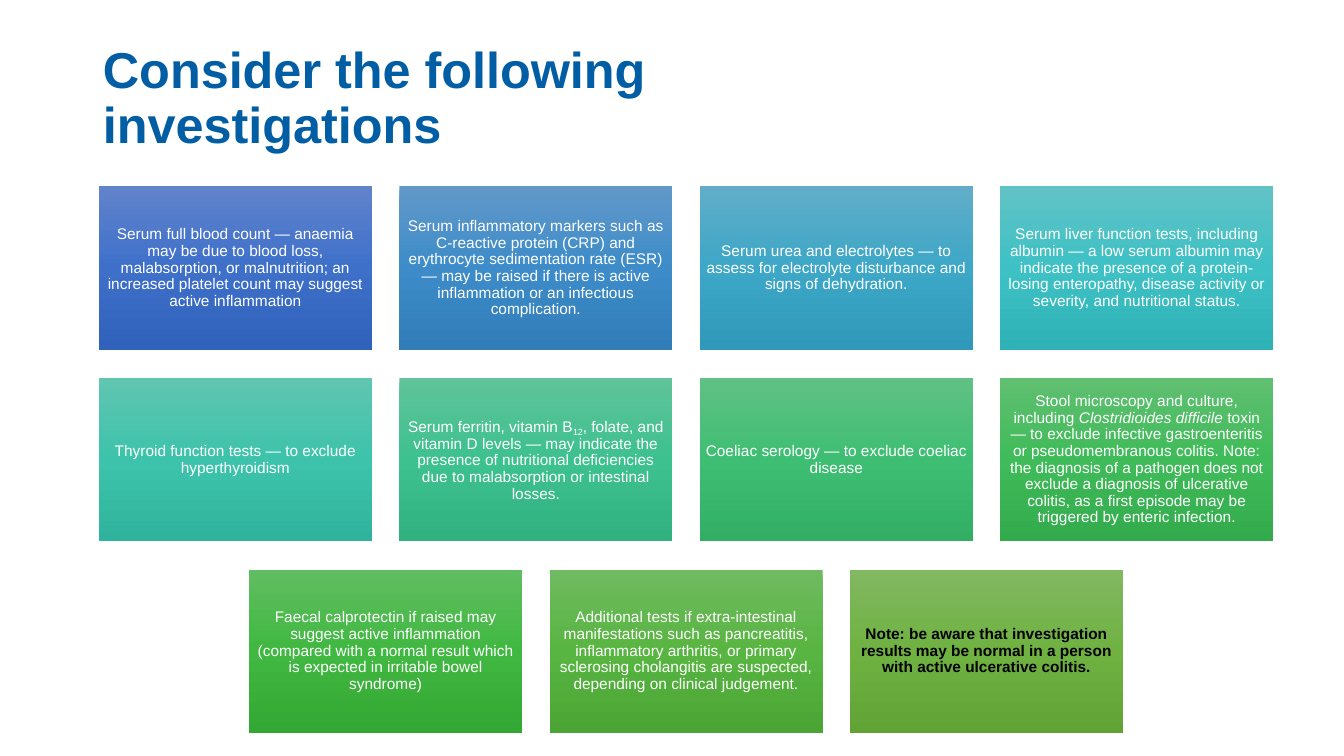
from copy import deepcopy
from dataclasses import dataclass

from pptx import Presentation
from pptx.dml.color import RGBColor
from pptx.enum.shapes import MSO_SHAPE as Preset
from pptx.enum.text import MSO_ANCHOR as Anchor, PP_ALIGN as Align
from pptx.util import Inches, Pt

# Card grid, in inches
COLUMNS = 4
GRID_LEFT, GRID_TOP = 0.98, 1.85
COLUMN_STEP, ROW_STEP = 2.98, 1.9
CARD_WIDTH, CARD_HEIGHT = 2.71, 1.62
CARD_INSET = Inches(0.05)
FONT = "Arial"
LINE_SPACING = 0.9


@dataclass
class Span:
    text: str
    italic: bool = False
    subscript: bool = False


@dataclass
class Card:
    gradient: tuple[str, str, str]
    spans: list[Span]
    ink: str = "FFFFFF"
    bold: bool = False


def colour(value: str) -> RGBColor:
    return RGBColor.from_string(value)


def fill_gradient(shape, shades: tuple[str, str, str]) -> None:
    """Fill from top to bottom through three evenly spaced shades."""
    shape.fill.gradient()
    shape.fill.gradient_angle = 270
    first_stop = shape.fill._fill._gradFill.gsLst[0]
    first_stop.addnext(deepcopy(first_stop))
    for index, (stop, shade) in enumerate(zip(shape.fill.gradient_stops, shades)):
        stop.position = index / 2
        stop.color.rgb = colour(shade)


def style_run(run, size: float, ink: str, bold: bool) -> None:
    run.font.name = FONT
    run.font.size = Pt(size)
    run.font.bold = bold
    run.font.color.rgb = colour(ink)


def draw_card(slide, card: Card, column: float, row: int) -> None:
    box = slide.shapes.add_shape(
        Preset.RECTANGLE,
        Inches(GRID_LEFT + column * COLUMN_STEP), Inches(GRID_TOP + row * ROW_STEP),
        Inches(CARD_WIDTH), Inches(CARD_HEIGHT))
    box.shadow.inherit = False
    box.line.fill.background()
    fill_gradient(box, card.gradient)

    frame = box.text_frame
    frame.word_wrap = True
    frame.vertical_anchor = Anchor.MIDDLE
    frame.margin_left = frame.margin_right = CARD_INSET
    frame.margin_top = frame.margin_bottom = CARD_INSET
    advice = frame.paragraphs[0]
    advice.alignment = Align.CENTER
    advice.line_spacing = LINE_SPACING
    for span in card.spans:
        run = advice.add_run()
        run.text = span.text
        style_run(run, 11, card.ink, card.bold)
        if span.italic:
            run.font.italic = True
        if span.subscript:
            run.font._element.set("baseline", "-25000")


def draw_title(slide, wording: str) -> None:
    title = slide.shapes.title
    title.left, title.top = Inches(0.92), Inches(0.4)
    title.width, title.height = Inches(9.01), Inches(1.45)
    title.text_frame.text = wording
    title.text_frame.word_wrap = True
    title.text_frame.vertical_anchor = Anchor.TOP
    heading = title.text_frame.paragraphs[0]
    heading.alignment = Align.LEFT
    heading.line_spacing = LINE_SPACING
    style_run(heading.runs[0], 36, "015EA4", True)


INVESTIGATIONS = [
    Card(("6183CB", "3E70CA", "3062BB"), [Span(
        "Serum full blood count — anaemia may be due to blood loss, malabsorption, or "
        "malnutrition; an increased platelet count may suggest active inflammation")]),
    Card(("6198C9", "3D8CC9", "307DB9"), [Span(
        "Serum inflammatory markers such as C-reactive protein (CRP) and erythrocyte "
        "sedimentation rate (ESR) — may be raised if there is active inflammation or "
        "an infectious complication.")]),
    Card(("61ADC8", "3DA7C7", "3098B8"), [Span(
        "Serum urea and electrolytes — to assess for electrolyte disturbance and signs "
        "of dehydration.")]),
    Card(("61C3C6", "3DC1C5", "2FB2B6"), [Span(
        "Serum liver function tests, including albumin — a low serum albumin may "
        "indicate the presence of a protein-losing enteropathy, disease activity or "
        "severity, and nutritional status.")]),
    Card(("60C5B1", "3DC3AB", "30B39C"), [Span(
        "Thyroid function tests — to exclude hyperthyroidism")]),
    Card(("60C39A", "3DC18F", "31B080"), [
        Span("Serum ferritin, vitamin B"),
        Span("12", subscript=True),
        Span(", folate, and vitamin D levels — may indicate the presence of nutritional "
             "deficiencies due to malabsorption or intestinal losses.")]),
    Card(("60C184", "3EBE73", "32AE65"), [Span(
        "Coeliac serology — to exclude coeliac disease")]),
    Card(("60BF71", "3FBB59", "33AB4C"), [
        Span("Stool microscopy and culture, including "),
        Span("Clostridioides difficile", italic=True),
        Span(" toxin — to exclude infective gastroenteritis or pseudomembranous colitis. "
             "Note: the diagnosis of a pathogen does not exclude a diagnosis of "
             "ulcerative colitis, as a first episode may be triggered by enteric "
             "infection.")]),
    Card(("61BD61", "40B841", "34A835"), [Span(
        "Faecal calprotectin if raised may suggest active inflammation (compared with "
        "a normal result which is expected in irritable bowel syndrome)")]),
    Card(("70BA61", "58B541", "4BA535"), [Span(
        "Additional tests if extra-intestinal manifestations such as pancreatitis, "
        "inflammatory arthritis, or primary sclerosing cholangitis are suspected, "
        "depending on clinical judgement.")]),
    Card(("81B861", "6FB242", "62A336"), [Span(
        "Note: be aware that investigation results may be normal in a person with "
        "active ulcerative colitis.")], ink="000000", bold=True),
]


def main() -> None:
    deck = Presentation()
    deck.slide_width, deck.slide_height = Inches(13.33), Inches(7.5)
    slide = deck.slides.add_slide(deck.slide_layouts[5])
    draw_title(slide, "Consider the following investigations")

    # Rows of four; a shorter last row is centred under the others
    for start in range(0, len(INVESTIGATIONS), COLUMNS):
        row_cards = INVESTIGATIONS[start:start + COLUMNS]
        indent = (COLUMNS - len(row_cards)) / 2
        for column, card in enumerate(row_cards):
            draw_card(slide, card, indent + column, start // COLUMNS)

    deck.save("out.pptx")


if __name__ == "__main__":
    main()
